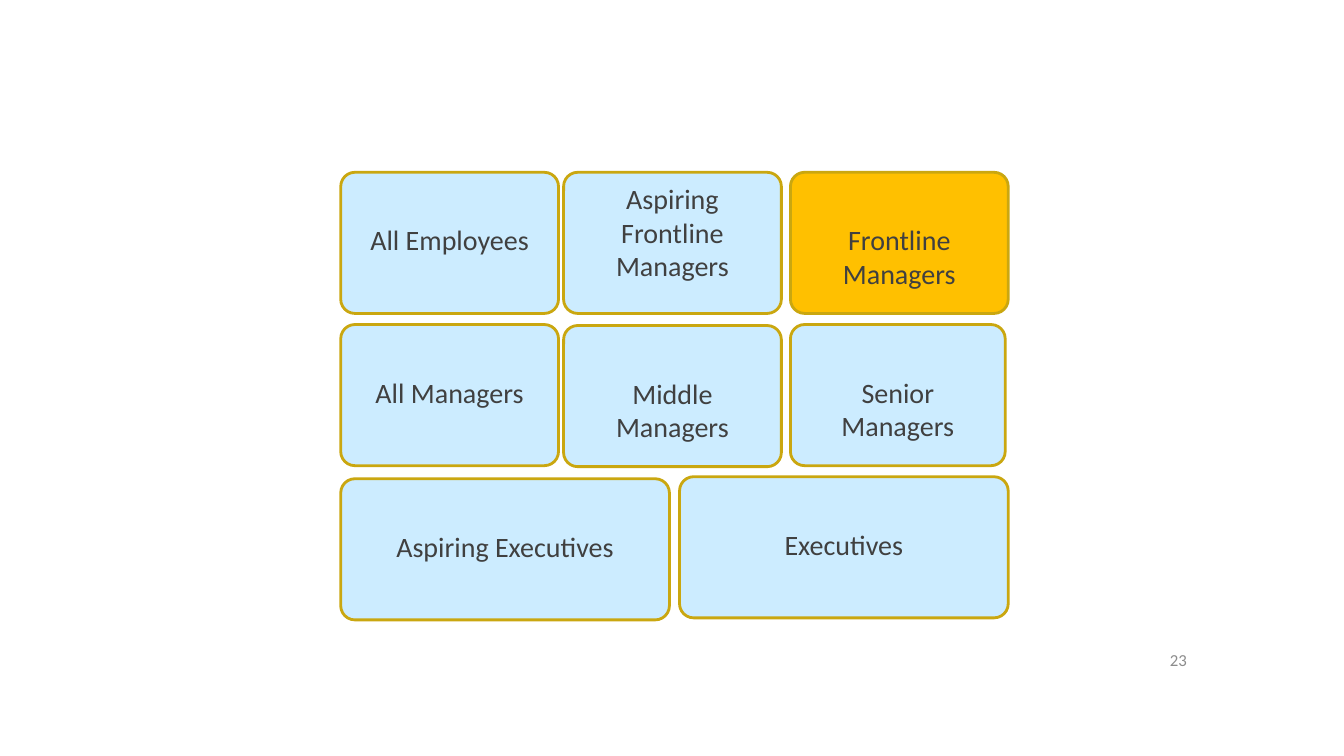
from pptx import Presentation
from pptx.dml.color import RGBColor
from pptx.enum.shapes import MSO_SHAPE
from pptx.enum.text import MSO_ANCHOR, PP_ALIGN
from pptx.util import Inches, Pt

ROUNDED = MSO_SHAPE.ROUNDED_RECTANGLE
TOP, MIDDLE = MSO_ANCHOR.TOP, MSO_ANCHOR.MIDDLE
CENTER, RIGHT = PP_ALIGN.CENTER, PP_ALIGN.RIGHT

PALE_BLUE, AMBER, GOLD = "CCECFF", "FFC000", "CAA710"
DARK_GREY, MID_GREY = "404040", "8C8C8C"
CARD_HEIGHT = 1.4
LOWERED, RAISED = 0.46, 0.05

AUDIENCES = [
    ("All Employees", 3.38, 1.71, 2.16, PALE_BLUE, LOWERED),
    ("Aspiring Frontline Managers", 5.59, 1.71, 2.16, PALE_BLUE, RAISED),
    ("Frontline Managers", 7.84, 1.71, 2.16, AMBER, LOWERED),
    ("All Managers", 3.38, 3.22, 2.16, PALE_BLUE, LOWERED),
    ("Middle Managers", 5.59, 3.23, 2.16, PALE_BLUE, LOWERED),
    ("Senior Managers", 7.84, 3.22, 2.13, PALE_BLUE, LOWERED),
    ("Aspiring Executives", 3.38, 4.75, 3.26, PALE_BLUE, LOWERED),
    ("Executives", 6.74, 4.73, 3.26, PALE_BLUE, LOWERED),
]


def rgb(hex_code):
    """Return the colour for a hex string."""
    return RGBColor.from_string(hex_code)


def write(frame, text, size=20, color=DARK_GREY, align=CENTER, anchor=TOP, inset=0.05):
    """Put one formatted paragraph in a text frame."""
    frame.word_wrap = True
    frame.vertical_anchor = anchor
    frame.margin_top = Inches(inset)
    paragraph = frame.paragraphs[0]
    paragraph.text = text
    paragraph.alignment = align
    paragraph.font.name = "Calibri"
    paragraph.font.size = Pt(size)
    paragraph.font.color.rgb = rgb(color)


def add_card(slide, audience, left, top, width, fill, inset):
    """Add one rounded audience card."""
    card = slide.shapes.add_shape(
        ROUNDED, Inches(left), Inches(top), Inches(width), Inches(CARD_HEIGHT)
    )
    card.adjustments[0] = 0.1
    card.shadow.inherit = False
    card.fill.solid()
    card.fill.fore_color.rgb = rgb(fill)
    card.line.color.rgb = rgb(GOLD)
    card.line.width = Pt(2)
    write(card.text_frame, audience, inset=inset)


def add_page_number(slide, number):
    """Add the page number at the lower right."""
    page_number = slide.shapes.add_textbox(
        Inches(9.42), Inches(6.35), Inches(2.45), Inches(0.4)
    )
    write(page_number.text_frame, number, size=12, color=MID_GREY,
          align=RIGHT, anchor=MIDDLE)


def main():
    """Build and save the slide."""
    deck = Presentation()
    deck.slide_width, deck.slide_height = Inches(13.33), Inches(7.5)
    slide = deck.slides.add_slide(deck.slide_layouts[6])
    for audience in AUDIENCES:
        add_card(slide, *audience)
    add_page_number(slide, "23")
    deck.save("out.pptx")


if __name__ == "__main__":
    main()
